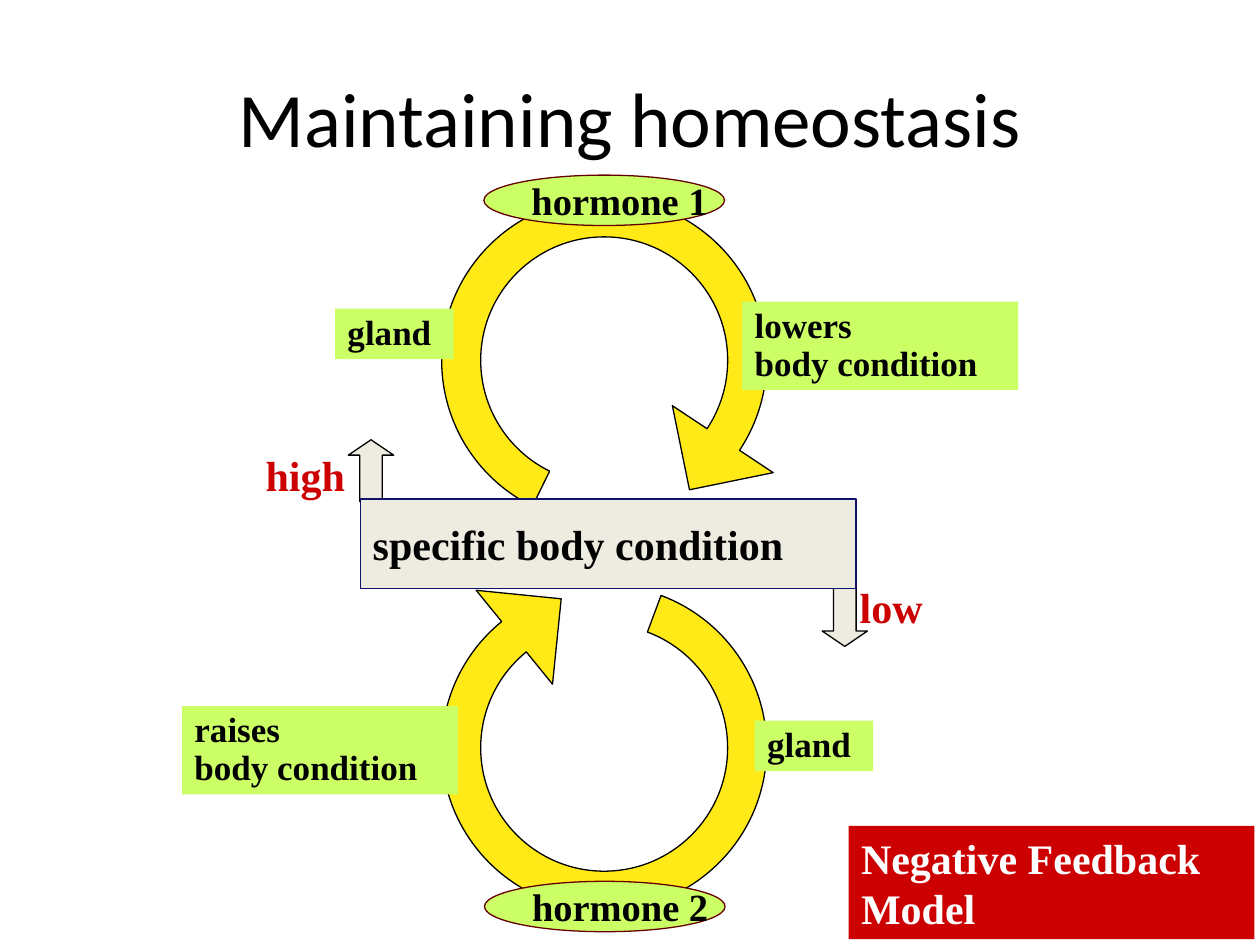
from math import ceil, cos, floor, radians, sin, tan

from lxml.etree import SubElement
from pptx import Presentation
from pptx.dml.color import RGBColor
from pptx.enum.shapes import MSO_SHAPE as Preset
from pptx.enum.text import MSO_ANCHOR as Anchor, MSO_AUTO_SIZE as AutoSize, PP_ALIGN as Align
from pptx.oxml.ns import qn
from pptx.util import Inches, Pt

COLUMNS, ROWS = 100, 75
CELL = Inches(0.1)
COLORS = {
    "black": "000000",
    "ink": "010101",
    "white": "FFFFFF",
    "yellow": "FFEA18",
    "green": "CCFF66",
    "beige": "EEECE1",
    "red": "CC0000",
    "maroon": "660000",
    "navy": "0F116A",
}
RING_COLUMN = 47.95
INNER, OUTER = 9.8, 12.9
HEAD_INNER, HEAD_OUTER, TIP_RADIUS, TIP_TURN = 6.5, 16.1, 12.3, 23


def cells(*values):
    return [round(value * CELL) for value in values]


def color(name):
    return RGBColor.from_string(COLORS[name])


def paint(shape, fill, line=None):
    shape.shadow.inherit = False
    shape.fill.solid()
    shape.fill.fore_color.rgb = color(fill)
    if line:
        shape.line.color.rgb = color(line)
        shape.line.width = Pt(0.75)
    else:
        shape.line.fill.background()


def write(shape, text, size, ink, font="Times New Roman", bold=True, align=Align.LEFT,
          spacing=None, wrap=False, grow=True):
    frame = shape.text_frame
    frame.text = text
    frame.word_wrap = wrap
    frame.vertical_anchor = Anchor.MIDDLE
    frame.auto_size = AutoSize.SHAPE_TO_FIT_TEXT if grow else AutoSize.NONE
    for paragraph in frame.paragraphs:
        paragraph.alignment = align
        if spacing:
            paragraph.line_spacing = spacing
        for run in paragraph.runs:
            run.font.name = font
            run.font.size = Pt(size)
            run.font.bold = bold
            run.font.color.rgb = color(ink)


def add_title(slide, text):
    title = slide.shapes.title
    title.left, title.top, title.width, title.height = cells(5, 3, 90, 12.5)
    write(title, text, 44, "black", "Calibri", False, Align.CENTER, wrap=True, grow=False)


def curve_line(line, controls, shape):
    line.tag = qn("a:cubicBezTo")
    for index, (x, y) in enumerate(controls):
        control = SubElement(line, qn("a:pt"))
        control.set("x", str(x - shape.left))
        control.set("y", str(y - shape.top))
        line.insert(index, control)


def add_cycle_arrow(slide, center_row, start, end):
    def point(radius, angle, stretch=0):
        across, down = cos(radians(angle)), sin(radians(angle))
        return cells(RING_COLUMN + radius * (across - stretch * down),
                     center_row + radius * (down + stretch * across))

    def controls(radius, first, last):
        stretch = 4 / 3 * tan(radians(last - first) / 4)
        return point(radius, first, stretch), point(radius, last, -stretch)

    quarters = [90 * turn for turn in range(ceil(start / 90), floor(end / 90) + 1)]
    angles = [start, *quarters, end]
    outline, curves = [], {}
    for radius, sweep in ((INNER, angles[::-1]), (OUTER, angles)):
        outline.append(point(radius, sweep[0]))
        for first, last in zip(sweep, sweep[1:]):
            curves[len(outline) - 1] = controls(radius, first, last)
            outline.append(point(radius, last))
    outline += [point(HEAD_OUTER, end), point(TIP_RADIUS, end + TIP_TURN), point(HEAD_INNER, end)]

    builder = slide.shapes.build_freeform(*outline[0], scale=1.0)
    builder.add_line_segments(outline[1:], close=True)
    arrow = builder.convert_to_shape()
    lines = list(arrow.element.iter(qn("a:lnTo")))
    for index, curve in curves.items():
        curve_line(lines[index], curve, arrow)
    paint(arrow, "yellow", "black")


def add_level_arrow(slide, preset, column, row):
    arrow = slide.shapes.add_shape(preset, *cells(column, row, 3.6, 4.9))
    arrow.adjustments[0] = 0.5
    arrow.adjustments[1] = 0.34
    paint(arrow, "beige", "black")


def add_level_label(slide, text, column, row, width):
    label = slide.shapes.add_textbox(*cells(column, row, width, 5))
    write(label, text, 24, "red")


def add_hormone(slide, text, column, row):
    oval = slide.shapes.add_shape(Preset.OVAL, *cells(column, row, 19.1, 4))
    paint(oval, "green", "maroon")
    write(oval, text, 22, "black", grow=False)


def add_box(slide, text, area, size, fill, ink, line=None, spacing=None):
    box = slide.shapes.add_shape(Preset.RECTANGLE, *cells(*area))
    paint(box, fill, line)
    write(box, text, size, ink, spacing=spacing)
    return box


def add_step(slide, text, column, row, width, height):
    add_box(slide, text, (column, row, width, height), 20, "green", "ink", spacing=0.9)


def main():
    presentation = Presentation()
    presentation.slide_width, presentation.slide_height = cells(COLUMNS, ROWS)
    slide = presentation.slides.add_slide(presentation.slide_layouts[5])

    add_title(slide, "Maintaining homeostasis")
    add_cycle_arrow(slide, 28.6, 116.2, 393.6)
    add_cycle_arrow(slide, 59.35, -69.5, 230.9)
    add_level_arrow(slide, Preset.UP_ARROW, 27.65, 34.9)
    add_level_label(slide, "high", 20.1, 35.2, 9)
    add_level_arrow(slide, Preset.DOWN_ARROW, 65.25, 46.4)
    add_level_label(slide, "low", 67.25, 45.65, 7.6)

    add_hormone(slide, "hormone 1", 38.4, 13.9)
    add_step(slide, "lowers\vbody condition", 58.9, 23.95, 21.9, 7)
    add_hormone(slide, "hormone 2", 38.45, 69.95)
    add_step(slide, "gland", 26.6, 24.5, 9.4, 4)
    condition = add_box(slide, "specific body condition", (28.6, 39.6, 39.35, 7.1),
                        24, "beige", "ink", line="navy")
    condition.text_frame.margin_top = condition.text_frame.margin_bottom = Inches(0.15)
    add_step(slide, "raises\vbody condition", 14.45, 56.05, 21.9, 7)
    add_step(slide, "gland", 59.9, 57.2, 9.4, 4)
    add_box(slide, "Negative Feedback\vModel", (67.35, 65.55, 32.2, 9), 24, "red", "white")

    presentation.save("out.pptx")


if __name__ == "__main__":
    main()
